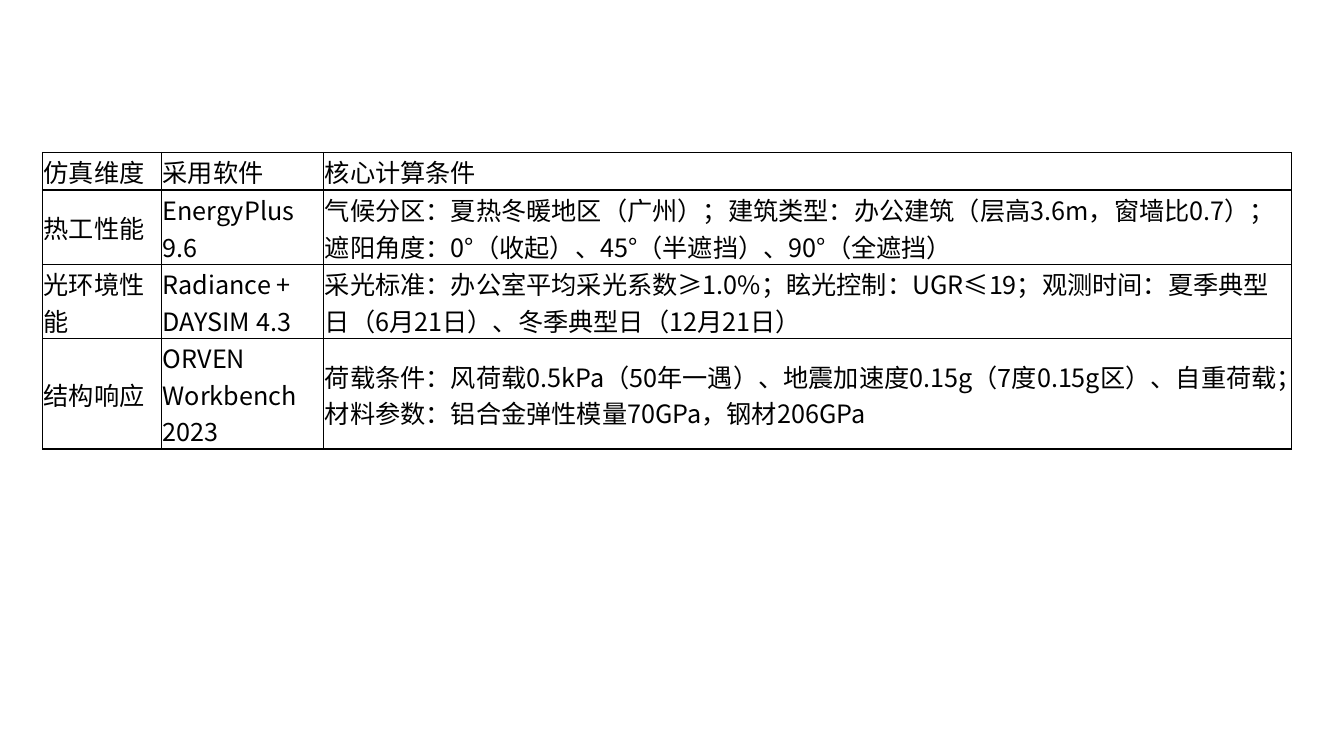
from lxml import etree
from pptx import Presentation
from pptx.dml.color import RGBColor
from pptx.enum.text import MSO_ANCHOR
from pptx.oxml.ns import qn
from pptx.util import Cm, Pt

MIDDLE = MSO_ANCHOR.MIDDLE
FONT = "Noto Sans CJK SC"
COLORS = {"text": "000000", "border": "000000", "cell": "FFFFFF"}
COLUMN_WIDTHS = [3, 4.09, 24.38]
ROW_HEIGHT = 0.46
SIMULATION_ROWS = [
    ["仿真维度", "采用软件", "核心计算条件"],
    ["热工性能", "EnergyPlus 9.6",
     "气候分区：夏热冬暖地区（广州）；建筑类型：办公建筑（层高3.6m，窗墙比0.7）；"
     "遮阳角度：0°（收起）、45°（半遮挡）、90°（全遮挡）"],
    ["光环境性能", "Radiance + DAYSIM 4.3",
     "采光标准：办公室平均采光系数≥1.0%；眩光控制：UGR≤19；"
     "观测时间：夏季典型日（6月21日）、冬季典型日（12月21日）"],
    ["结构响应", "ORVEN Workbench 2023",
     "荷载条件：风荷载0.5kPa（50年一遇）、地震加速度0.15g（7度0.15g区）、自重荷载；"
     "材料参数：铝合金弹性模量70GPa，钢材206GPa"],
]


def add_borders(cell):
    properties = cell._tc.get_or_add_tcPr()
    for position, side in enumerate(("a:lnL", "a:lnR", "a:lnT", "a:lnB")):
        line = etree.Element(qn(side), w=str(Pt(1)))
        fill = etree.SubElement(line, qn("a:solidFill"))
        etree.SubElement(fill, qn("a:srgbClr"), val=COLORS["border"])
        properties.insert(position, line)


# Slide
presentation = Presentation()
presentation.slide_width = Cm(33.87)
presentation.slide_height = Cm(19.05)
slide = presentation.slides.add_slide(presentation.slide_layouts[6])

# Table grid
table_frame = slide.shapes.add_table(
    len(SIMULATION_ROWS), len(COLUMN_WIDTHS),
    Cm(1.07), Cm(3.84), Cm(sum(COLUMN_WIDTHS)), Cm(6.17))
table = table_frame.table
table.first_row = False
table.horz_banding = False
for column, width in zip(table.columns, COLUMN_WIDTHS):
    column.width = Cm(width)
for row in table.rows:
    row.height = Cm(ROW_HEIGHT)  # rows grow to fit their text
table_frame.height = Cm(6.17)

# Cells
for row, texts in zip(table.rows, SIMULATION_ROWS):
    for cell, text in zip(row.cells, texts):
        cell.vertical_anchor = MIDDLE
        cell.margin_left = cell.margin_right = cell.margin_top = Cm(0.03)
        cell.margin_bottom = Cm(0)
        cell.fill.solid()
        cell.fill.fore_color.rgb = RGBColor.from_string(COLORS["cell"])
        add_borders(cell)
        run = cell.text_frame.paragraphs[0].add_run()
        run.text = text
        run.font.size = Pt(18)
        run.font.name = FONT
        run.font.color.rgb = RGBColor.from_string(COLORS["text"])
        etree.SubElement(run.font._element, qn("a:ea"), typeface=FONT)

presentation.save("out.pptx")
